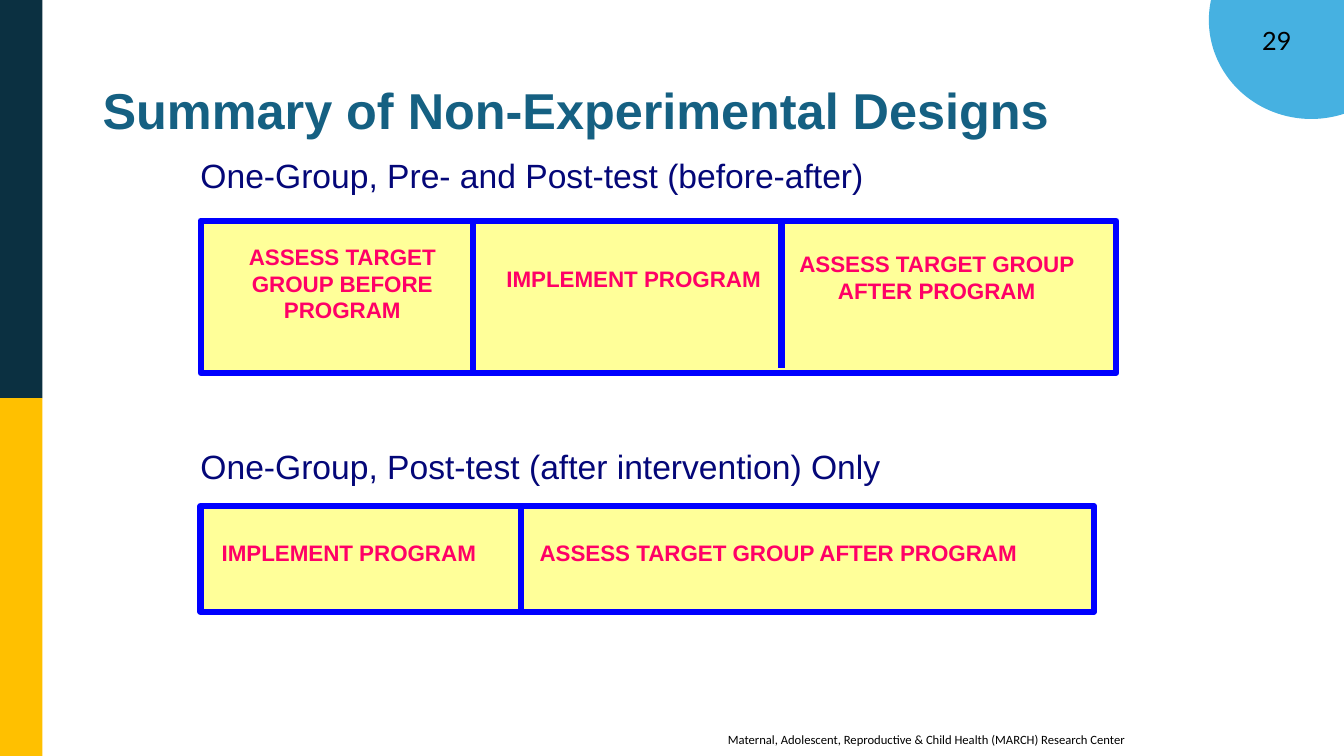
from dataclasses import dataclass

from lxml.etree import SubElement
from pptx import Presentation
from pptx.dml.color import RGBColor as RGB
from pptx.enum.shapes import MSO_CONNECTOR as Link, MSO_SHAPE as Shape
from pptx.enum.text import MSO_ANCHOR as Anchor, PP_ALIGN as Align
from pptx.oxml.ns import qn
from pptx.util import Inches, Pt


@dataclass(frozen=True)
class Theme:
    navy: str = "0B3041"
    gold: str = "FFC000"
    sky: str = "46B1E1"
    teal: str = "156082"
    ink: str = "040778"
    black: str = "000000"
    cream: str = "FFFF99"
    blue: str = "0000FF"
    pink: str = "FF0066"
    title: int = 36
    head: int = 24
    page: int = 18
    label: int = 16
    foot: int = 9
    rule: float = 4.5
    edge: float = 1.5


THEME = Theme()


def color(code):
    return RGB.from_string(code)


def add_block(slide, kind, area, fill, line=None, width=0):
    block = slide.shapes.add_shape(kind, *map(Inches, area))
    block.shadow.inherit = False
    block.fill.solid()
    block.fill.fore_color.rgb = color(fill)
    if line:
        block.line.color.rgb = color(line)
        block.line.width = Pt(width)
    else:
        block.line.fill.background()


def add_text(slide, words, area, size, tint, face="Arial", bold=False,
             align=Align.LEFT, anchor=Anchor.TOP, space=1.0):
    box = slide.shapes.add_textbox(*map(Inches, area))
    frame = box.text_frame
    frame.text = words
    frame.word_wrap = True
    frame.vertical_anchor = anchor
    para = frame.paragraphs[0]
    para.alignment = align
    para.line_spacing = space
    font = para.runs[0].font
    font.name = face
    font.size = Pt(size)
    font.bold = bold
    font.color.rgb = color(tint)


def add_rule(slide, x, top, end):
    rule = slide.shapes.add_connector(
        Link.STRAIGHT, Inches(x), Inches(top), Inches(x), Inches(end))
    rule.line.color.rgb = color(THEME.blue)
    rule.line.width = Pt(THEME.rule)
    SubElement(rule._element.spPr, qn("a:effectLst"))


def add_design(slide, head, top, frame, labels, rules):
    add_text(slide, head, (1.89, top, 9.96, 0.45), THEME.head, THEME.ink,
             space=0.9)
    add_block(slide, Shape.RECTANGLE, frame, THEME.cream, THEME.blue,
              THEME.rule)
    for words, area in labels:
        add_text(slide, words, area, THEME.label, THEME.pink, bold=True,
                 align=Align.CENTER)
    for rule in rules:
        add_rule(slide, *rule)


def add_decor(slide):
    add_block(slide, Shape.OVAL, (12, -0.77, 2.01, 1.94), THEME.sky,
              THEME.sky, THEME.edge)
    add_text(slide, "29", (12.42, 0.2, 0.5, 0.4), THEME.page, THEME.black,
             "Lato")
    add_block(slide, Shape.RECTANGLE, (0, 0, 0.42, 3.95), THEME.navy)
    add_block(slide, Shape.RECTANGLE, (0, 3.95, 0.42, 3.55), THEME.gold)
    add_text(slide, "Maternal, Adolescent, Reproductive & Child Health "
             "(MARCH) Research Center", (7.12, 7.21, 4.49, 0.25),
             THEME.foot, THEME.black, "Calibri")


def main():
    deck = Presentation()
    deck.slide_width = Inches(13.33)
    deck.slide_height = Inches(7.5)
    slide = deck.slides.add_slide(deck.slide_layouts[6])
    add_decor(slide)
    add_text(slide, "Summary of Non-Experimental Designs",
             (0.92, 0.4, 11.5, 1.45), THEME.title, THEME.teal, bold=True,
             anchor=Anchor.MIDDLE, space=0.9)
    add_design(
        slide, "One-Group, Pre- and Post-test (before-after)", 1.53,
        (1.99, 2.19, 9.08, 1.51),
        [("ASSESS TARGET GROUP BEFORE PROGRAM", (2.27, 2.36, 2.25, 0.89)),
         ("IMPLEMENT PROGRAM", (4.82, 2.58, 2.93, 0.36)),
         ("ASSESS TARGET GROUP AFTER PROGRAM", (7.75, 2.43, 3.08, 0.62))],
        [(4.69, 2.19, 3.69), (7.75, 2.22, 3.65)])
    add_design(
        slide, "One-Group, Post-test (after intervention) Only", 4.42,
        (1.99, 5.02, 8.86, 1.05),
        [("IMPLEMENT PROGRAM", (2.07, 5.3, 2.78, 0.36)),
         ("ASSESS TARGET GROUP AFTER PROGRAM", (5.13, 5.3, 5.18, 0.36))],
        [(5.17, 5.02, 6.07)])
    deck.save("out.pptx")


if __name__ == "__main__":
    main()
